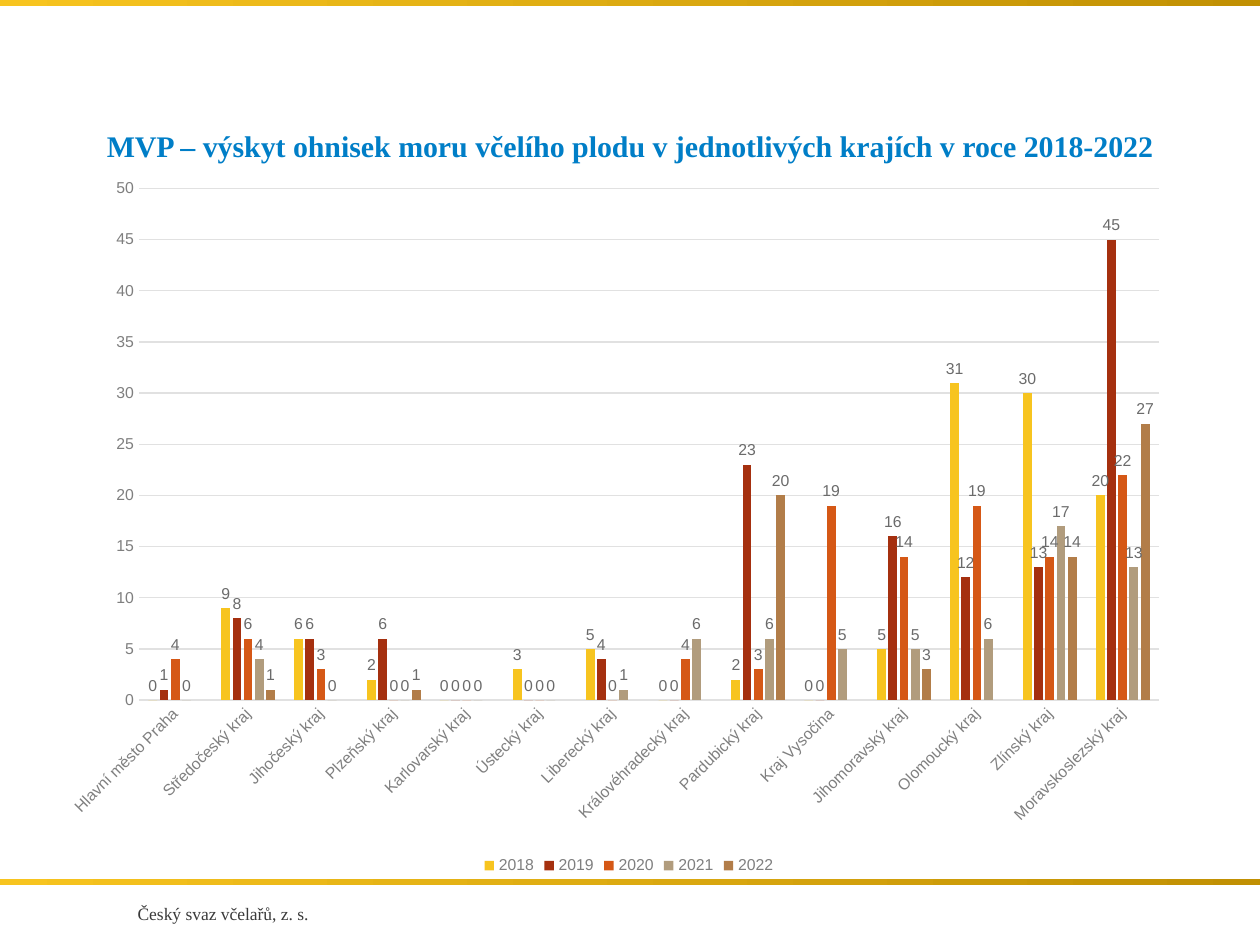
from pptx import Presentation
from pptx.chart.data import CategoryChartData
from pptx.dml.color import RGBColor
from pptx.enum.chart import XL_CHART_TYPE, XL_LABEL_POSITION, XL_LEGEND_POSITION, XL_TICK_MARK
from pptx.enum.shapes import MSO_SHAPE
from pptx.enum.text import MSO_ANCHOR, MSO_AUTO_SIZE, PP_ALIGN
from pptx.oxml import parse_xml
from pptx.oxml.ns import nsdecls, qn
from pptx.util import Emu, Pt

SLIDE_W, SLIDE_H = 1260, 945
EMU_PER_PX = 914400 / 126

GOLD = RGBColor(0xF7, 0xC4, 0x1F)
DARK_GOLD = RGBColor(0xC1, 0x90, 0x03)
BLUE = RGBColor(0x00, 0x7E, 0xC7)
DARK_GREY = RGBColor(0x3A, 0x3A, 0x3A)
AXIS_GREY = RGBColor(0x7F, 0x7F, 0x7F)
LABEL_GREY = RGBColor(0x6B, 0x6B, 0x6B)
GRID_GREY = RGBColor(0xE1, 0xE1, 0xE1)
RED = RGBColor(0xA5, 0x30, 0x0F)
ORANGE = RGBColor(0xD5, 0x58, 0x16)
SAND = RGBColor(0xB1, 0x9C, 0x7D)
BROWN = RGBColor(0xB2, 0x7D, 0x49)

SERIF, SANS = "Times New Roman", "Arial"

REGIONS = [
    "Hlavní město Praha", "Středočeský kraj", "Jihočeský kraj", "Plzeňský kraj",
    "Karlovarský kraj", "Ústecký kraj", "Liberecký kraj", "Královéhradecký kraj",
    "Pardubický kraj", "Kraj Vysočina", "Jihomoravský kraj", "Olomoucký kraj",
    "Zlínský kraj", "Moravskoslezský kraj",
]
OUTBREAKS = [
    ("2018", GOLD, [0, 9, 6, 2, 0, 3, 5, 0, 2, 0, 5, 31, 30, 20]),
    ("2019", RED, [1, 8, 6, 6, 0, 0, 4, 0, 23, 0, 16, 12, 13, 45]),
    ("2020", ORANGE, [4, 6, 3, 0, 0, 0, 0, 4, 3, 19, 14, 19, 14, 22]),
    ("2021", SAND, [0, 4, 0, 0, 0, 0, 1, 6, 6, 5, 5, 6, 17, 13]),
    ("2022", BROWN, [None, 1, None, 1, None, None, None, None, 20, None, 3, None, 14, 27]),
]
PLOT_AREA = {"x": 0.06, "y": 0.015, "w": 0.916, "h": 0.729}


def px(length):
    return Emu(round(length * EMU_PER_PX))


def set_font(font, name, size, color, bold=False):
    font.name, font.size, font.bold = name, Pt(size), bold
    font.color.rgb = color


def add_gold_bar(slide, left, top, width, height):
    bar = slide.shapes.add_shape(MSO_SHAPE.RECTANGLE, *map(px, (left, top, width, height)))
    bar.shadow.inherit = False
    bar.line.fill.background()
    bar.fill.gradient()
    bar.fill.gradient_angle = 180
    for stop, color, position in zip(bar.fill.gradient_stops, (DARK_GOLD, GOLD), (0, 1)):
        stop.color.rgb = color
        stop.position = position


def add_footer(slide, left, top, width, height):
    add_gold_bar(slide, left, top, width, 6)
    association = slide.shapes.add_textbox(px(left + 68), px(top + 18), px(310), px(height - 18))
    frame = association.text_frame
    frame.word_wrap = True
    frame.text = "Český svaz včelařů, z. s."
    paragraph = frame.paragraphs[0]
    paragraph.alignment = PP_ALIGN.CENTER
    set_font(paragraph.runs[0].font, SERIF, 10, DARK_GREY)


def place_title(slide, left, top, width, height):
    title = slide.shapes.title
    title.left, title.top, title.width, title.height = map(px, (left, top, width, height))
    frame = title.text_frame
    frame.auto_size = MSO_AUTO_SIZE.NONE
    frame.vertical_anchor = MSO_ANCHOR.MIDDLE
    frame.text = "MVP – výskyt ohnisek moru včelího plodu v jednotlivých krajích v roce 2018-2022"
    paragraph = frame.paragraphs[0]
    paragraph.alignment = PP_ALIGN.CENTER
    paragraph.line_spacing = 0.9
    set_font(paragraph.runs[0].font, SERIF, 17.1, BLUE, bold=True)


def fix_plot_area(chart):
    plot_area = chart._chartSpace.chart.plotArea
    for layout in plot_area.findall(qn("c:layout")):
        plot_area.remove(layout)
    modes = "".join(f'<c:{side}Mode val="edge"/>' for side in "xy")
    sizes = "".join(f'<c:{side} val="{share}"/>' for side, share in PLOT_AREA.items())
    plot_area.insert(0, parse_xml(
        f'<c:layout {nsdecls("c")}><c:manualLayout><c:layoutTarget val="inner"/>'
        f"{modes}{sizes}</c:manualLayout></c:layout>"))


def format_axes(chart):
    regions, counts = chart.category_axis, chart.value_axis
    for axis in (regions, counts):
        axis.major_tick_mark = axis.minor_tick_mark = XL_TICK_MARK.NONE
        set_font(axis.tick_labels.font, SANS, 9, AXIS_GREY)
    # Slanted region names
    regions._element.find(qn("c:txPr")).find(qn("a:bodyPr")).set("rot", "-2700000")
    counts.minimum_scale, counts.maximum_scale, counts.major_unit = 0, 50, 5
    counts.has_major_gridlines = True
    counts.format.line.fill.background()
    for line in (regions.format.line, counts.major_gridlines.format.line):
        line.color.rgb = GRID_GREY
        line.width = Pt(0.75)


def format_series(series, color):
    series.format.fill.solid()
    series.format.fill.fore_color.rgb = color
    series.invert_if_negative = False
    labels = series.data_labels
    labels.show_value = True
    labels.position = XL_LABEL_POSITION.OUTSIDE_END
    set_font(labels.font, SANS, 9, LABEL_GREY)


def add_outbreak_chart(slide, left, top, width, height):
    data = CategoryChartData()
    data.categories = REGIONS
    for year, _, counts in OUTBREAKS:
        data.add_series(year, counts)
    chart = slide.shapes.add_chart(
        XL_CHART_TYPE.COLUMN_CLUSTERED, *map(px, (left, top, width, height)), data).chart
    chart.has_title = False
    set_font(chart.font, SANS, 10, DARK_GREY)

    plot = chart.plots[0]
    plot.gap_width, plot.overlap = 219, -27
    plot.vary_by_categories = False
    for series, (_, color, _) in zip(plot.series, OUTBREAKS):
        format_series(series, color)

    format_axes(chart)
    fix_plot_area(chart)
    chart.has_legend = True
    chart.legend.position = XL_LEGEND_POSITION.BOTTOM
    chart.legend.include_in_layout = False
    set_font(chart.legend.font, SANS, 9, AXIS_GREY)


def main():
    presentation = Presentation()
    presentation.slide_width, presentation.slide_height = px(SLIDE_W), px(SLIDE_H)
    slide = presentation.slides.add_slide(presentation.slide_layouts[5])
    add_footer(slide, 0, 879, SLIDE_W, 52)
    add_gold_bar(slide, 0, 0, SLIDE_W, 6)
    place_title(slide, 31, 106, 1198, 83)
    add_outbreak_chart(slide, 71, 178, 1115, 702)
    presentation.save("out.pptx")


if __name__ == "__main__":
    main()
